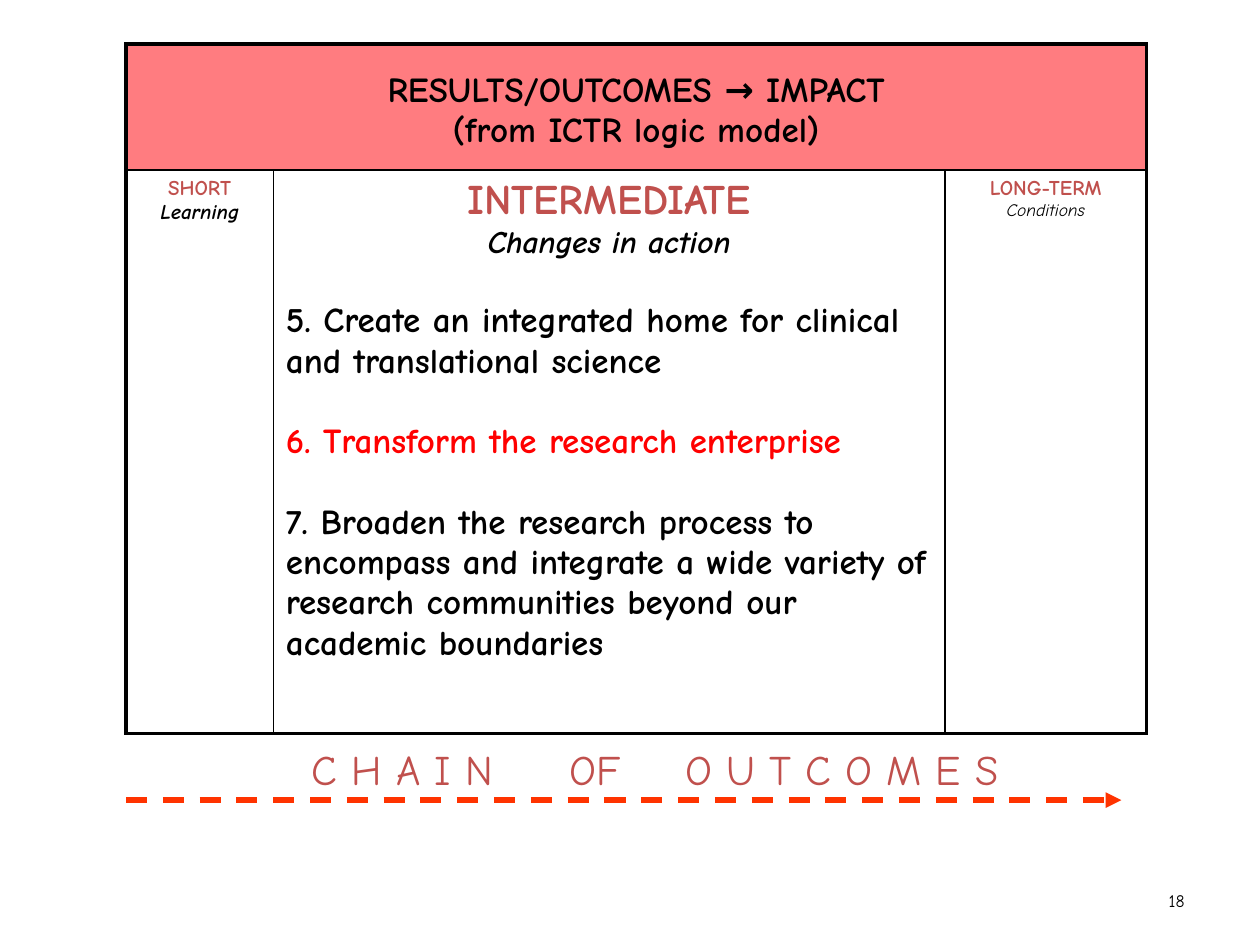
import dataclasses
import typing

import lxml.etree
import pptx
import pptx.dml.color
import pptx.enum.dml
import pptx.enum.shapes
import pptx.enum.text
import pptx.oxml.ns
import pptx.util

Inches = pptx.util.Inches
Pt = pptx.util.Pt
RGBColor = pptx.dml.color.RGBColor
Align = pptx.enum.text.PP_ALIGN
qn = pptx.oxml.ns.qn

BLACK = RGBColor(0x00, 0x00, 0x00)
PINK = RGBColor(0xFF, 0x7C, 0x80)
BRICK = RGBColor(0xC0, 0x50, 0x4D)
RED = RGBColor(0xFF, 0x00, 0x00)
ORANGE = RGBColor(0xFF, 0x33, 0x00)
FONT = "Comic Neue"
THICK, THIN = 2.25, 1
GAP = 23


@dataclasses.dataclass
class Line:
    text: str
    size: float
    color: RGBColor = BLACK
    bold: bool = True
    slant: bool = False
    align: Align = Align.CENTER
    before: float = 0


@dataclasses.dataclass
class Cell:
    row: int
    col: int
    lines: list[Line]
    fill: typing.Optional[RGBColor] = None
    top: float = 0.05


def item(text: str, color: RGBColor = BLACK) -> Line:
    return Line(text, 20, color, align=Align.LEFT, before=GAP)


CELLS = [
    Cell(0, 0, [
        Line("RESULTS/OUTCOMES → IMPACT", 20),
        Line("(from ICTR logic model)", 20),
    ], PINK, 0.21),
    Cell(1, 0, [
        Line("SHORT", 12, BRICK),
        Line("Learning", 12, slant=True),
    ]),
    Cell(1, 1, [
        Line("INTERMEDIATE", 24, BRICK),
        Line("Changes in action", 18, slant=True),
        item("5. Create an integrated home for clinical and translational science"),
        item("6. Transform the research enterprise", RED),
        item("7. Broaden the research process to encompass and integrate a wide "
             "variety of research communities beyond our academic boundaries"),
    ]),
    Cell(1, 2, [
        Line("LONG-TERM", 12, BRICK),
        Line("Conditions", 10, bold=False, slant=True),
    ]),
]
WIDTHS = [1.17, 5.33, 1.6]
HEIGHTS = [1, 4.47]
CHAIN = [("C H A I N", 0), (" ", 36), ("OF", 0), (" ", 29), ("O U T C O M E S", 0)]


def style(font, line: Line) -> None:
    form = {"name": FONT, "size": Pt(line.size), "bold": line.bold, "italic": line.slant}
    for key, value in form.items():
        setattr(font, key, value)
    font.color.rgb = line.color


def write(frame, lines: list[Line]) -> None:
    for spot, line in enumerate(lines):
        para = frame.paragraphs[0] if spot == 0 else frame.add_paragraph()
        para.alignment = line.align
        para.space_before = Pt(line.before)
        run = para.add_run()
        run.text = line.text
        style(run.font, line)


def edge(cell, side: str, width: float) -> None:
    props = cell._tc.get_or_add_tcPr()
    line = lxml.etree.SubElement(props, qn(f"a:ln{side}"), w=str(Pt(width)))
    fill = lxml.etree.SubElement(line, qn("a:solidFill"))
    lxml.etree.SubElement(fill, qn("a:srgbClr"), val=str(BLACK))


def add_grid(slide) -> None:
    rows, cols = len(HEIGHTS), len(WIDTHS)
    table = slide.shapes.add_table(
        rows, cols, Inches(1), Inches(0.35), Inches(sum(WIDTHS)), Inches(sum(HEIGHTS))
    ).table
    table.first_row = table.horz_banding = False
    for col, width in zip(table.columns, WIDTHS):
        col.width = Inches(width)
    for row, height in zip(table.rows, HEIGHTS):
        row.height = Inches(height)
    table.cell(0, 0).merge(table.cell(0, cols - 1))
    for row in range(rows):
        for col in range(cols):
            outer = {"L": col == 0, "R": col == cols - 1 or row == 0,
                     "T": row == 0, "B": row == rows - 1}
            for side, thick in outer.items():
                edge(table.cell(row, col), side, THICK if thick else THIN)
    for part in CELLS:
        cell = table.cell(part.row, part.col)
        cell.margin_top = Inches(part.top)
        if part.fill is None:
            cell.fill.background()
        else:
            cell.fill.solid()
            cell.fill.fore_color.rgb = part.fill
        write(cell.text_frame, part.lines)


def add_text(slide, left: float, top: float, width: float, height: float):
    frame = slide.shapes.add_textbox(
        Inches(left), Inches(top), Inches(width), Inches(height)
    ).text_frame
    frame.word_wrap = True
    return frame


def add_chain(slide) -> None:
    para = add_text(slide, 1.35, 5.85, 7.7, 0.5).paragraphs[0]
    para.alignment = Align.CENTER
    for text, space in CHAIN:
        run = para.add_run()
        run.text = text
        style(run.font, Line(text, 24, BRICK, False))
        if space:
            run._r.get_or_add_rPr().set("spc", str(space * 100))


def add_arrow(slide) -> None:
    arrow = slide.shapes.add_connector(
        pptx.enum.shapes.MSO_CONNECTOR.STRAIGHT,
        Inches(1), Inches(6.35), Inches(8.9), Inches(6.35)
    )
    arrow.line.color.rgb = ORANGE
    arrow.line.width = Pt(3)
    arrow.line.dash_style = pptx.enum.dml.MSO_LINE.DASH
    lxml.etree.SubElement(arrow.line._get_or_add_ln(), qn("a:tailEnd"), type="triangle")
    lxml.etree.SubElement(arrow._element.spPr, qn("a:effectLst"))


def main() -> None:
    deck = pptx.Presentation()
    deck.slide_width, deck.slide_height = Inches(10), Inches(7.5)
    slide = deck.slides.add_slide(deck.slide_layouts[6])
    frame = add_text(slide, 7.17, 6.95, 2.33, 0.4)
    frame.vertical_anchor = pptx.enum.text.MSO_ANCHOR.MIDDLE
    write(frame, [Line("18", 10, bold=False, align=Align.RIGHT)])
    add_grid(slide)
    add_chain(slide)
    add_arrow(slide)
    deck.save("out.pptx")


if __name__ == "__main__":
    main()
